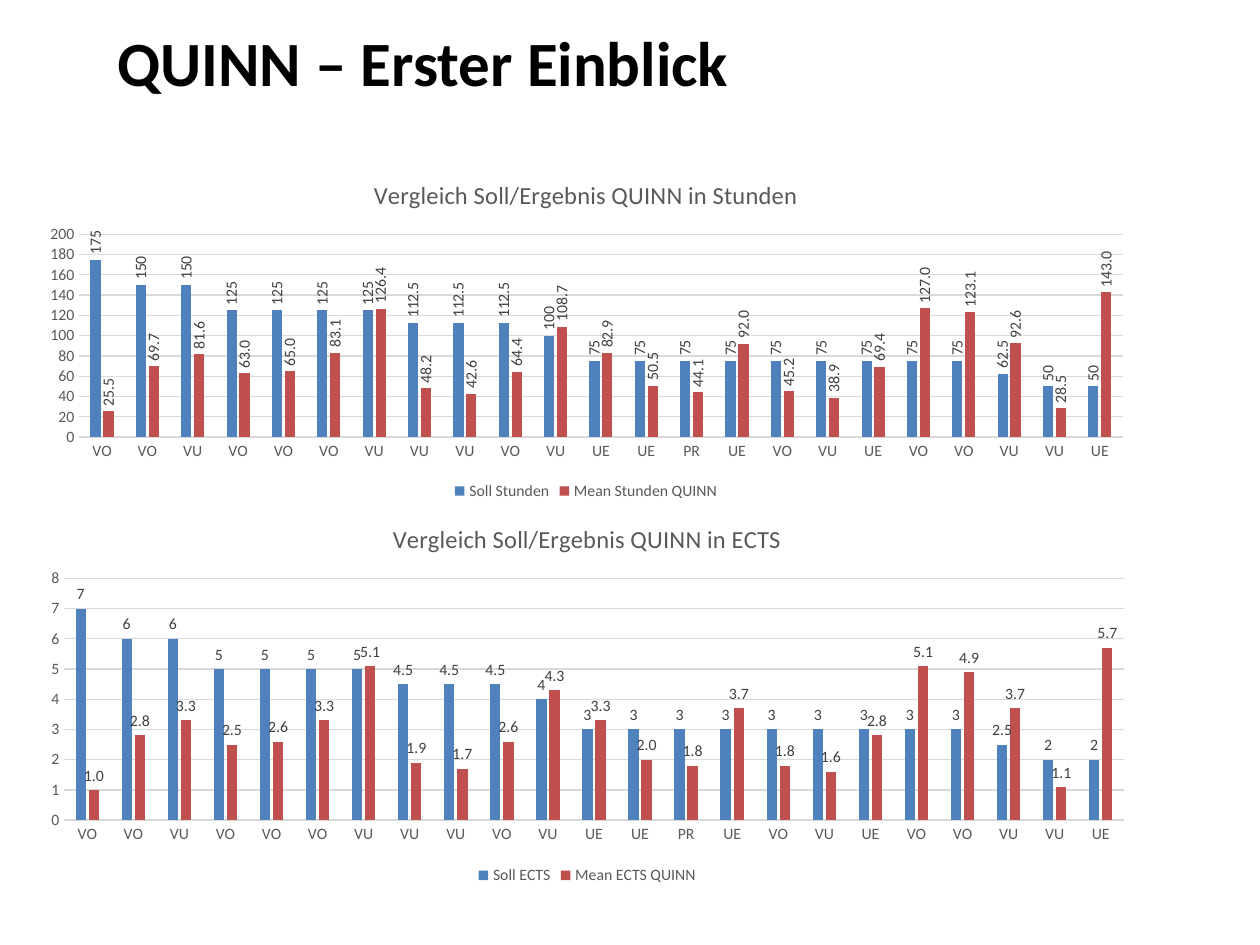
from dataclasses import dataclass

from lxml import etree
from pptx import Presentation
from pptx.chart.data import CategoryChartData
from pptx.dml.color import RGBColor
from pptx.enum.chart import XL_CHART_TYPE, XL_LABEL_POSITION, XL_LEGEND_POSITION, XL_TICK_MARK
from pptx.enum.text import MSO_ANCHOR, PP_ALIGN
from pptx.oxml.ns import qn
from pptx.util import Pt

EMU_PER_PX = 9144
FONT = "Calibri"
CLUSTERED = XL_CHART_TYPE.COLUMN_CLUSTERED
OUTSIDE_END = XL_LABEL_POSITION.OUTSIDE_END
BOTTOM = XL_LEGEND_POSITION.BOTTOM
NO_TICK = XL_TICK_MARK.NONE
MIDDLE = MSO_ANCHOR.MIDDLE
LEFT = PP_ALIGN.LEFT

COLORS = {
    "black": "000000",
    "text": "595959",
    "label": "404040",
    "grid": "D9D9D9",
    "target": "4F81BD",
    "mean": "C0504D",
}

COURSE_TYPES = (
    "VO VO VU VO VO VO VU VU VU VO VU UE UE PR UE VO VU UE VO VO VU VU UE"
).split()


@dataclass(frozen=True)
class Box:
    left: int
    top: int
    width: int
    height: int

    def emu(self) -> list[int]:
        return [value * EMU_PER_PX for value in (self.left, self.top, self.width, self.height)]


@dataclass(frozen=True)
class Series:
    name: str
    color: str
    number_format: str
    values: list[float]


@dataclass(frozen=True)
class Comparison:
    title: str
    box: Box
    plot: Box
    axis_maximum: int
    axis_step: int
    label_rotation: int
    series: tuple[Series, Series]


COMPARISONS = (
    Comparison(
        "Vergleich Soll/Ergebnis QUINN in Stunden",
        Box(22, 127, 886, 274), Box(63, 186, 828, 161), 200, 20, -90,
        (
            Series("Soll Stunden", "target", "General",
                   [175] + [150] * 2 + [125] * 4 + [112.5] * 3 + [100] + [75] * 9 + [62.5, 50, 50]),
            Series("Mean Stunden QUINN", "mean", "0.0",
                   [25.5, 69.7, 81.6, 63.0, 65.0, 83.1, 126.4, 48.2, 42.6, 64.4, 108.7, 82.9,
                    50.5, 44.1, 92.0, 45.2, 38.9, 69.4, 127.0, 123.1, 92.6, 28.5, 143.0]),
        ),
    ),
    Comparison(
        "Vergleich Soll/Ergebnis QUINN in ECTS",
        Box(23, 399, 886, 307), Box(51, 459, 841, 192), 8, 1, 0,
        (
            Series("Soll ECTS", "target", "General",
                   [7] + [6] * 2 + [5] * 4 + [4.5] * 3 + [4] + [3] * 9 + [2.5, 2, 2]),
            Series("Mean ECTS QUINN", "mean", "0.0",
                   [1.0, 2.8, 3.3, 2.5, 2.6, 3.3, 5.1, 1.9, 1.7, 2.6, 4.3, 3.3,
                    2.0, 1.8, 3.7, 1.8, 1.6, 2.8, 5.1, 4.9, 3.7, 1.1, 5.7]),
        ),
    ),
)


def set_attributes(target, values: dict) -> None:
    for name, value in values.items():
        setattr(target, name, value)


def format_font(font, size: int, color: str, bold: bool = False) -> None:
    set_attributes(font, {"name": FONT, "size": Pt(size), "bold": bold})
    font.color.rgb = RGBColor.from_string(COLORS[color])


def format_line(line) -> None:
    line.width = Pt(0.75)
    line.color.rgb = RGBColor.from_string(COLORS["grid"])


def place_plot(chart, box: Box, plot: Box) -> None:
    plot_area = chart.element.find(".//" + qn("c:plotArea"))
    for existing in plot_area.findall(qn("c:layout")):
        plot_area.remove(existing)
    layout = etree.Element(qn("c:layout"))
    manual = etree.SubElement(layout, qn("c:manualLayout"))
    settings = {
        "layoutTarget": "inner",
        "xMode": "edge",
        "yMode": "edge",
        "x": (plot.left - box.left) / box.width,
        "y": (plot.top - box.top) / box.height,
        "w": plot.width / box.width,
        "h": plot.height / box.height,
    }
    for name, value in settings.items():
        etree.SubElement(manual, qn(f"c:{name}")).set("val", str(value))
    plot_area.insert(0, layout)


def format_axes(chart, comparison: Comparison) -> None:
    for axis in (chart.category_axis, chart.value_axis):
        set_attributes(axis, {"major_tick_mark": NO_TICK, "minor_tick_mark": NO_TICK})
        format_font(axis.tick_labels.font, 9, "text")
    format_line(chart.category_axis.format.line)
    value_axis = chart.value_axis
    set_attributes(value_axis, {
        "minimum_scale": 0,
        "maximum_scale": comparison.axis_maximum,
        "major_unit": comparison.axis_step,
        "has_major_gridlines": True,
    })
    value_axis.format.line.fill.background()
    format_line(value_axis.major_gridlines.format.line)


def format_series(chart_series, series: Series, rotation: int) -> None:
    chart_series.format.fill.solid()
    chart_series.format.fill.fore_color.rgb = RGBColor.from_string(COLORS[series.color])
    labels = chart_series.data_labels
    set_attributes(labels, {
        "show_value": True,
        "position": OUTSIDE_END,
        "number_format": series.number_format,
        "number_format_is_linked": False,
    })
    format_font(labels.font, 9, "label")
    body = chart_series._element.find(".//" + qn("a:bodyPr"))
    body.set("rot", str(rotation * 60000))
    body.set("vert", "horz")


def add_comparison(slide, comparison: Comparison) -> None:
    data = CategoryChartData()
    data.categories = COURSE_TYPES
    for series in comparison.series:
        data.add_series(series.name, series.values)
    chart = slide.shapes.add_chart(CLUSTERED, *comparison.box.emu(), data).chart
    format_font(chart.font, 10, "black")
    chart.has_title = True
    title_frame = chart.chart_title.text_frame
    title_frame.text = comparison.title
    format_font(title_frame.paragraphs[0].runs[0].font, 14, "text")
    chart.has_legend = True
    set_attributes(chart.legend, {"position": BOTTOM, "include_in_layout": False})
    format_font(chart.legend.font, 9, "text")
    set_attributes(chart.plots[0], {"gap_width": 219, "overlap": -27, "vary_by_categories": False})
    format_axes(chart, comparison)
    for chart_series, series in zip(chart.plots[0].series, comparison.series):
        format_series(chart_series, series, comparison.label_rotation)
    place_plot(chart, comparison.box, comparison.plot)


def add_title(slide, text: str, box: Box) -> None:
    title = slide.shapes.title
    set_attributes(title, dict(zip(("left", "top", "width", "height"), box.emu())))
    frame = title.text_frame
    frame.text = text
    set_attributes(frame, {"vertical_anchor": MIDDLE, "word_wrap": True})
    paragraph = frame.paragraphs[0]
    paragraph.alignment = LEFT
    format_font(paragraph.runs[0].font, 36, "black", bold=True)


def main() -> None:
    presentation = Presentation()
    set_attributes(presentation, {
        "slide_width": 1000 * EMU_PER_PX,
        "slide_height": 750 * EMU_PER_PX,
    })
    slide = presentation.slides.add_slide(presentation.slide_layouts[5])
    add_title(slide, "QUINN – Erster Einblick", Box(83, 13, 813, 71))
    for comparison in COMPARISONS:
        add_comparison(slide, comparison)
    presentation.save("out.pptx")


if __name__ == "__main__":
    main()
